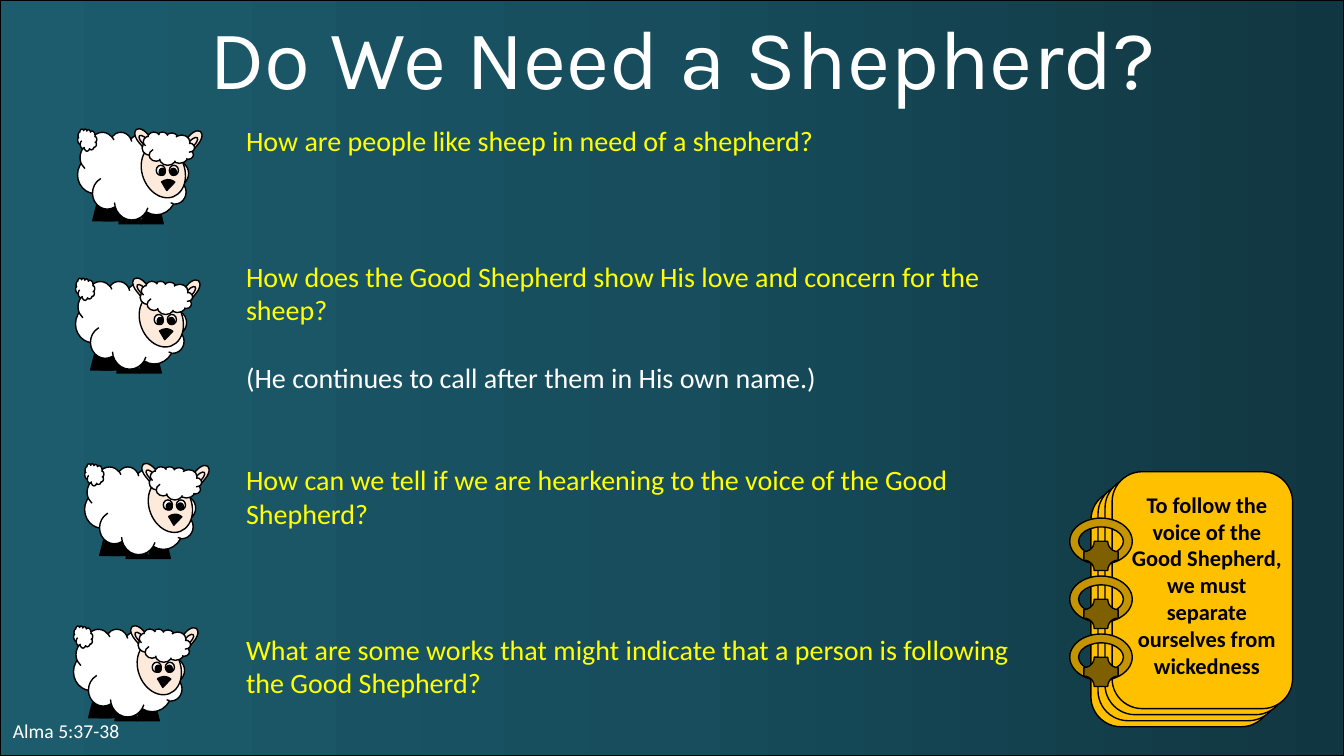
from copy import deepcopy

from pptx import Presentation
from pptx.dml.color import RGBColor
from pptx.enum.shapes import MSO_SHAPE as Shape
from pptx.enum.text import MSO_ANCHOR as Anchor, MSO_AUTO_SIZE as AutoSize, PP_ALIGN as Align
from pptx.oxml.ns import qn
from pptx.util import Inches, Pt

COLORS = {
    "white": "FFFFFF", "black": "000000", "yellow": "FFFF00",
    "skin": "FDEADA", "ear": "FFEBEB",
    "page": "FFC000", "ring": "C49500", "clasp": "7E6000",
    "dark": "103641", "middle": "174D5C", "light": "1C5C6D",
}
WIDTH, HEIGHT = 13.33, 7.5
BACKDROP_STOPS = [(0, "dark"), (0.5, "middle"), (1, "light")]

TITLE = "Do We Need a Shepherd?"
REFERENCE = "Alma 5:37-38"
LESSON = "To follow the voice of the Good Shepherd, we must separate ourselves from wickedness"
LINE_HEIGHT = 24.4
QUESTIONS = [
    ("How are people like sheep in need of a shepherd?", "yellow", 0),
    ("How does the Good Shepherd show His love and concern for the sheep?", "yellow", 3),
    ("(He continues to call after them in His own name.)", "white", 1),
    ("How can we tell if we are hearkening to the voice of the Good Shepherd?", "yellow", 2),
    ("What are some works that might indicate that a person is following the Good Shepherd?",
     "yellow", 3),
]

FLOCK = [(0.77, 1.31), (0.75, 2.79), (0.84, 4.63), (0.73, 6.24)]
FEET = [(0.41, 0.73), (0.25, 0.70), (0.15, 0.70), (0.63, 0.73)]
SHEEP_PARTS = [
    *[(Shape.TRAPEZOID, (x, y, 0.22, 0.18), "black", {"flip": True}) for x, y in FEET],
    (Shape.CLOUD, (0, 0, 1.1, 0.87), "white", {"flip": True}),
    (Shape.OVAL, (0.64, 0.11, 0.42, 0.55), "skin", {"flip": True, "rotation": 338.9}),
    (Shape.CLOUD, (0, -0.03, 0.19, 0.22), "white", {"flip": True}),
    (Shape.FLOWCHART_DELAY, (0.54, 0, 0.22, 0.12), "skin", {"rotation": 230.5}),
    (Shape.FLOWCHART_DELAY, (0.59, 0.06, 0.15, 0.06), "ear", {"rotation": 226}),
    (Shape.FLOWCHART_DELAY, (1.04, 0.02, 0.22, 0.12), "skin", {"flip": True, "rotation": 129.5}),
    (Shape.FLOWCHART_DELAY, (1.06, 0.08, 0.15, 0.06), "ear", {"flip": True, "rotation": 134}),
    (Shape.PIE, (0.77, 0.48, 0.23, 0.2), "black",
     {"flip": True, "rotation": 133.6, "adjust": (0, 44.611)}),
    *[(Shape.OVAL, (x, 0.33, 0.09, 0.1), "white", {"flip": True}) for x in (0.91, 0.78)],
    *[(Shape.OVAL, (x, 0.36, 0.06, 0.07), "black", {"flip": True}) for x in (0.92, 0.81)],
    (Shape.CLOUD, (0.64, 0, 0.52, 0.33), "white", {"flip": True}),
]

PAGES, PAGE_LEFT, PAGE_TOP, PAGE_STEP = 4, 10.82, 4.86, (0.07, -0.06)
RINGS, RING_TOP, RING_STEP = 3, 5.14, 0.575


def rgb(name):
    return RGBColor.from_string(COLORS[name])


def write(frame, paragraphs, size, font="Calibri", align=Align.LEFT, bold=False):
    frame.word_wrap = True
    frame.auto_size = AutoSize.NONE
    frame.vertical_anchor = Anchor.TOP
    for index, (words, color, gap) in enumerate(paragraphs):
        paragraph = frame.add_paragraph() if index else frame.paragraphs[0]
        paragraph.alignment = align
        paragraph.space_before = Pt(gap * LINE_HEIGHT)
        run = paragraph.add_run()
        run.text = words
        run.font.size = Pt(size)
        run.font.name = font
        run.font.bold = bold
        run.font.color.rgb = rgb(color)


def place(shape, box):
    shape.left, shape.top, shape.width, shape.height = map(Inches, box)


def draw(shapes, preset, box, color, flip=False, rotation=0, adjust=()):
    shape = shapes.add_shape(preset, *map(Inches, box))
    shape.shadow.inherit = False
    shape.fill.solid()
    shape.fill.fore_color.rgb = rgb(color)
    shape.line.color.rgb = rgb("black")
    shape.line.width = Pt(1)
    shape.rotation = rotation
    for index, value in enumerate(adjust):
        shape.adjustments[index] = value
    if flip:
        shape._element.spPr.find(qn("a:xfrm")).set("flipH", "1")
    return shape


def draw_backdrop(slide):
    backdrop = draw(slide.shapes, Shape.RECTANGLE, (0, 0, WIDTH, HEIGHT), "dark")
    backdrop.fill.gradient()
    backdrop.fill.gradient_angle = 180
    stop_list = backdrop._element.spPr.find(".//" + qn("a:gsLst"))
    stop_list.append(deepcopy(stop_list[0]))
    for stop, (position, color) in zip(backdrop.fill.gradient_stops, BACKDROP_STOPS):
        stop.position = position
        stop.color.rgb = rgb(color)
    slide.shapes._spTree.insert(2, backdrop._element)


def draw_sheep(slide, left, top):
    sheep = slide.shapes.add_group_shape().shapes
    for preset, (x, y, width, height), color, options in SHEEP_PARTS:
        draw(sheep, preset, (left + x, top + y, width, height), color, **options)


def draw_notebook(slide):
    notebook = slide.shapes.add_group_shape().shapes
    for page in range(PAGES):
        left, top = PAGE_LEFT + page * PAGE_STEP[0], PAGE_TOP + page * PAGE_STEP[1]
        draw(notebook, Shape.ROUNDED_RECTANGLE, (left, top, 1.79, 2.35), "page")
    ring_tops = [RING_TOP + ring * RING_STEP for ring in range(RINGS)]
    for top in ring_tops:
        draw(notebook, Shape.DONUT, (10.61, top, 0.62, 0.46), "ring", adjust=(0.191,))
    for top in ring_tops:
        draw(notebook, Shape.PLAQUE, (10.75, top + 0.23, 0.34, 0.29), "clasp", adjust=(0.355,))
    lesson = notebook.add_textbox(*map(Inches, (11.11, 4.82, 1.72, 1.99)))
    write(lesson.text_frame, [(LESSON, "black", 0)], 16, align=Align.CENTER, bold=True)


def main():
    deck = Presentation()
    deck.slide_width, deck.slide_height = Inches(WIDTH), Inches(HEIGHT)
    slide = deck.slides.add_slide(deck.slide_layouts[1])
    title, questions = slide.placeholders

    draw_backdrop(slide)
    place(title, (1.62, 0, 10.3, 1.11))
    write(title.text_frame, [(TITLE, "white", 0)], 60, font="Karla", align=Align.CENTER)

    place(questions, (2.34, 1.17, 7.87, 5.82))
    write(questions.text_frame, QUESTIONS, 20)
    for paragraph in questions.text_frame.paragraphs:
        properties = paragraph._p.get_or_add_pPr()
        properties.set("marL", "0")
        properties.set("indent", "0")
        properties.append(properties.makeelement(qn("a:buNone"), {}))

    reference = slide.shapes.add_textbox(*map(Inches, (0.03, 7.08, 1.33, 0.34)))
    write(reference.text_frame, [(REFERENCE, "white", 0)], 14)

    for left, top in FLOCK:
        draw_sheep(slide, left, top)
    draw_notebook(slide)
    deck.save("out.pptx")


if __name__ == "__main__":
    main()
